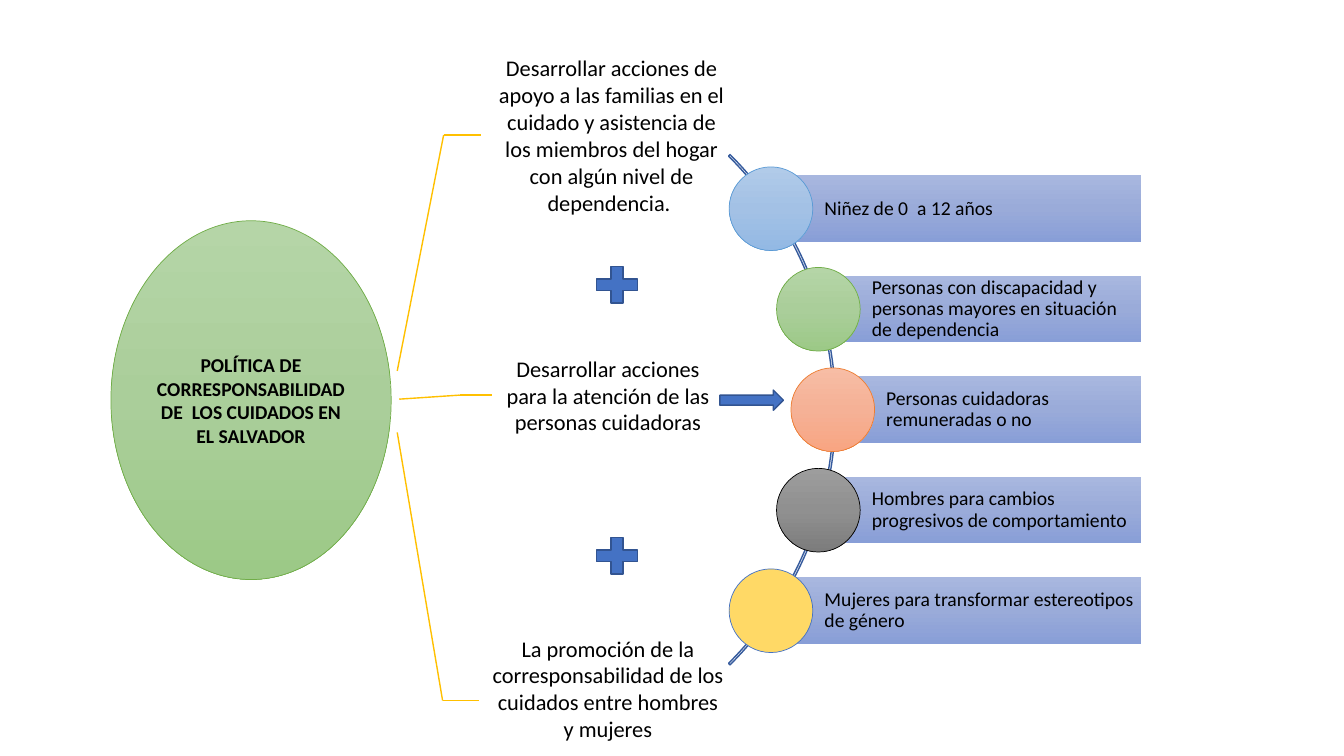
import copy
import math

from pptx import Presentation, util as u
from pptx.dml.color import RGBColor
from pptx.enum import shapes, text
from pptx.oxml.ns import qn
from pptx.oxml.xmlchemy import OxmlElement

CELL = u.Inches(0.1)
KIND = shapes.MSO_SHAPE
BLACK = RGBColor(0, 0, 0)
GOLD = RGBColor(0xFF, 0xC0, 0x00)
BLUE = RGBColor(0x44, 0x72, 0xC4)
NAVY = RGBColor(0x32, 0x54, 0x91)
ARC = RGBColor(0x36, 0x5B, 0x9D)
LEAF = RGBColor(0x70, 0xAD, 0x47)
SKY = RGBColor(0x5B, 0x9B, 0xD5)
RUST = RGBColor(0xED, 0x7D, 0x31)
YELLOW = RGBColor(0xFF, 0xD9, 0x66)


def shades(*codes):
    return [RGBColor.from_string(code) for code in codes]


GREENS = shades("B5D5A7", "AACE9A", "9CC987")
SKIES = shades("B1CBE9", "A3C1E5", "93B9E4")
PEACHES = shades("F7BDA5", "F5B196", "F8A582")
GREYS = shades("9D9D9D", "909090", "7C7C7C")
BLUES = shades("A8B7DF", "9AABD9", "889ED7")


class Canvas:
    font = "Calibri"

    def __init__(self, slide):
        self.slide = slide

    def span(self, *cells):
        return [round(cell * CELL) for cell in cells]

    def shape(self, kind, box, fill=None, line=None, width=1):
        item = self.slide.shapes.add_shape(kind, *self.span(*box))
        item.shadow.inherit = False
        if isinstance(fill, list):
            self.blend(item, fill)
        elif fill is not None:
            item.fill.solid()
            item.fill.fore_color.rgb = fill
        else:
            item.fill.background()
        if line is None:
            item.line.fill.background()
        else:
            item.line.color.rgb = line
            item.line.width = u.Pt(width)
        return item

    def blend(self, item, tones):
        item.fill.gradient()
        item.fill.gradient_angle = 270
        stops = item._element.spPr.find(".//" + qn("a:gsLst"))
        stops.insert(1, copy.deepcopy(stops[0]))
        for rank, (stop, tone) in enumerate(zip(item.fill.gradient_stops, tones)):
            stop.position = rank / 2
            stop.color.rgb = tone

    def disc(self, x, y, wide, high, fill, line):
        box = (x - wide / 2, y - high / 2, wide, high)
        return self.shape(KIND.OVAL, box, fill, line, 0.5)

    def letter(self, item, words, size, pads, align, bold=False, lead=1.0):
        frame = item.text_frame
        frame.word_wrap = True
        frame.vertical_anchor = text.MSO_ANCHOR.MIDDLE
        (frame.margin_left, frame.margin_top,
         frame.margin_right, frame.margin_bottom) = self.span(*pads)
        frame.text = words
        para = frame.paragraphs[0]
        para.alignment = align
        para.line_spacing = lead
        font = para.runs[0].font
        font.name, font.size, font.bold = self.font, u.Pt(size), bold
        font.color.rgb = BLACK

    def label(self, box, words, pads):
        item = self.slide.shapes.add_textbox(*self.span(*box))
        self.letter(item, words, 16, pads, text.PP_ALIGN.CENTER)
        return item

    def line(self, start, end, goal=None):
        item = self.slide.shapes.add_connector(
            shapes.MSO_CONNECTOR.STRAIGHT, *self.span(*start, *end))
        item.line.color.rgb = GOLD
        item.line.width = u.Pt(1)
        item._element.spPr.append(OxmlElement("a:effectLst"))
        if goal is not None:
            item.end_connect(goal, 1)


AIMS = [
    ("Desarrollar acciones de apoyo a las familias en el cuidado y asistencia "
     "de los miembros del hogar con algún nivel de dependencia. ",
     (39.4, 36.8), (44, 13.4), (47.7, 25.9, 12.9), 1.2),
    ("Desarrollar acciones para la atención de las personas cuidadoras",
     (39.6, 39.6), (45.6, 39.2), (48.8, 23, 13.8), 1.2),
    ("La promoción de la corresponsabilidad de los cuidados entre hombres y mujeres",
     (39.4, 42.9), (43.9, 69.5), (47.5, 25.6, 13.8), 3.6),
]
GROUPS = [
    ("Niñez de 0  a 12 años", SKIES, SKY),
    ("Personas con discapacidad y personas mayores en situación de dependencia",
     GREENS, LEAF),
    ("Personas cuidadoras remuneradas o no", PEACHES, RUST),
    ("Hombres para cambios progresivos de comportamiento", GREYS, BLACK),
    ("Mujeres para transformar estereotipos de género", YELLOW, BLUE),
]


def draw_aims(page):
    hub = page.disc(24.9, 39.7, 27.8, 35.6, GREENS, LEAF)
    page.letter(hub, "POLÍTICA DE CORRESPONSABILIDAD DE  LOS CUIDADOS EN EL SALVADOR",
                14, (0, 0, 0, 0), text.PP_ALIGN.CENTER, bold=True)
    for words, start, bend, (left, wide, high), foot in AIMS:
        box = (left, bend[1] - high / 2, wide, high)
        goal = page.label(box, words, (1.2, 1.2, 1.2, foot))
        page.line(start, bend)
        page.line(bend, (left, bend[1]), goal)


def draw_groups(page):
    hub_x, hub_y, size, reach = 47.1, 40.65, 71.6, 35.5
    step, high, right = 9.97, 6.6, 113.2
    arc = page.shape(KIND.BLOCK_ARC, (hub_x - size / 2, hub_y - size / 2, size, size),
                     line=ARC)
    for rank, value in enumerate((189, 27, 0.003)):
        arc.adjustments[rank] = value
    for rank, (words, fill, line) in enumerate(GROUPS):
        drop = (rank - 2) * step
        x, y = hub_x + math.sqrt(reach ** 2 - drop ** 2), hub_y + drop
        bar = page.shape(KIND.RECTANGLE, (x, y - high / 2, right - x, high), BLUES)
        page.letter(bar, words, 14, (5.3, 0.4, 0.4, 0.4), text.PP_ALIGN.LEFT, lead=0.9)
        page.disc(x, y, 8.3, 8.3, fill, line)


def main():
    deck = Presentation()
    deck.slide_width, deck.slide_height = u.Inches(13.33), u.Inches(7.5)
    page = Canvas(deck.slides.add_slide(deck.slide_layouts[6]))
    draw_aims(page)
    draw_groups(page)
    for top in (25.8, 52.7):
        page.shape(KIND.MATH_PLUS, (58.4, top, 5.6, 4.9), BLUE, NAVY)
    page.shape(KIND.RIGHT_ARROW, (71.4, 38.7, 6.3, 2), BLUE, NAVY)
    deck.save("out.pptx")


if __name__ == "__main__":
    main()
